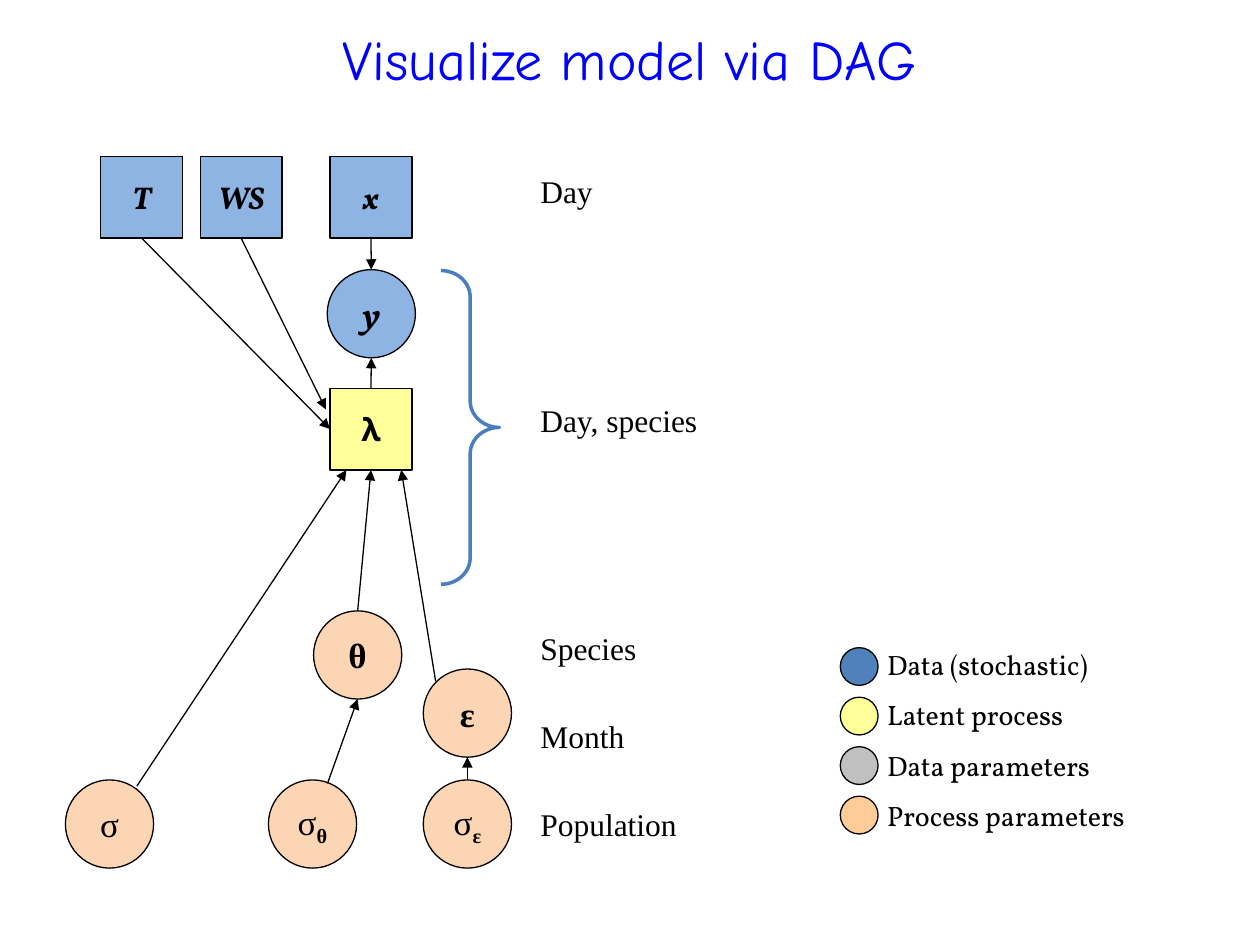
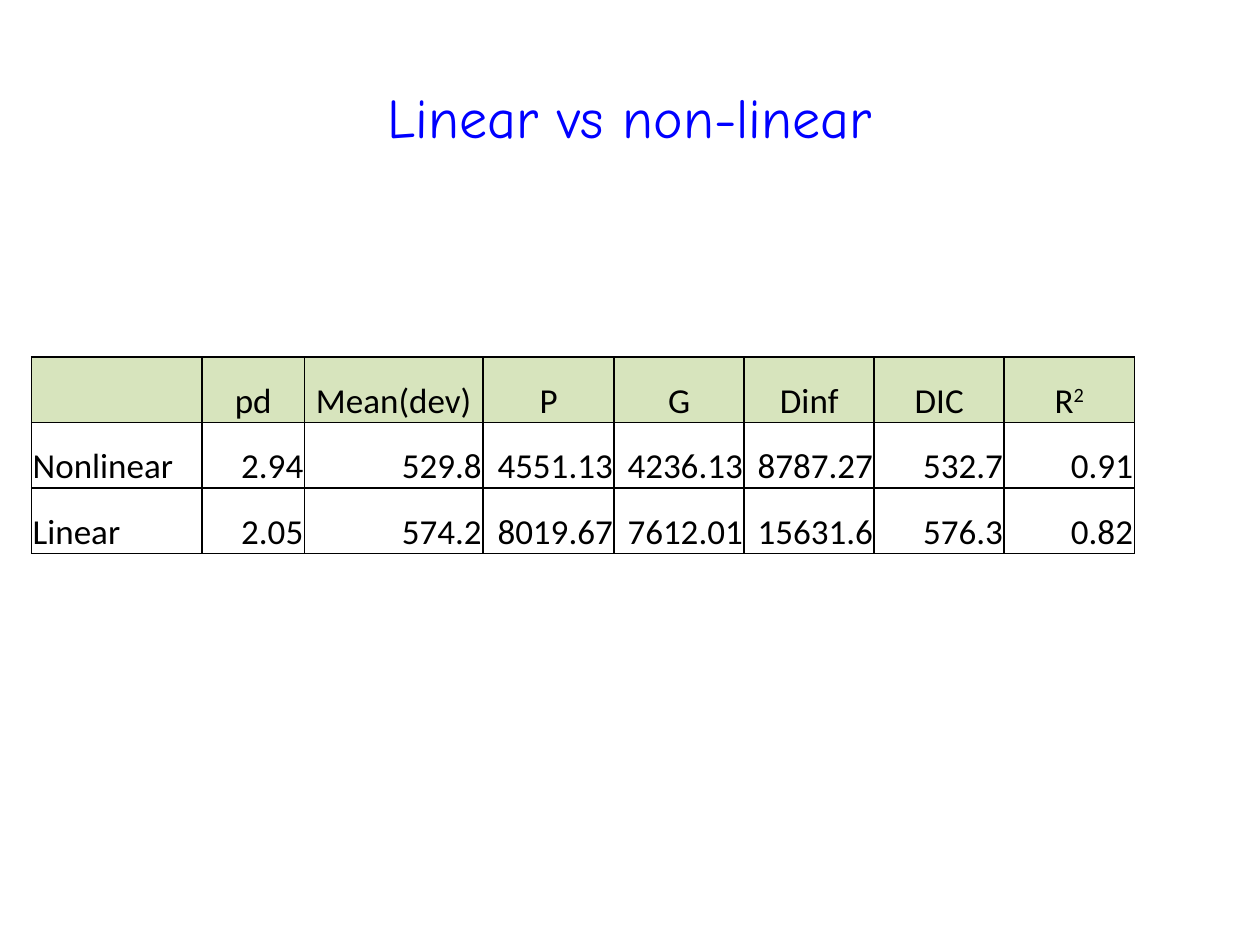
from lxml.etree import SubElement
from pptx import Presentation
from pptx.dml.color import RGBColor
from pptx.enum.shapes import MSO_CONNECTOR, MSO_SHAPE
from pptx.enum.text import MSO_ANCHOR, PP_ALIGN
from pptx.oxml.ns import qn
from pptx.util import Pt

BLACK = RGBColor(0x00, 0x00, 0x00)
TITLE_BLUE = RGBColor(0x00, 0x00, 0xFF)
DATA_BLUE = RGBColor(0x8E, 0xB4, 0xE3)
LEGEND_BLUE = RGBColor(0x4F, 0x81, 0xBD)
LATENT_YELLOW = RGBColor(0xFF, 0xFF, 0x99)
LEGEND_GREY = RGBColor(0xC0, 0xC0, 0xC0)
PARAM_ORANGE = RGBColor(0xFC, 0xD5, 0xB5)
LEGEND_ORANGE = RGBColor(0xFF, 0xCC, 0x99)
BRACE_BLUE = RGBColor(0x4B, 0x7E, 0xBC)
HEADER_GREEN = RGBColor(0xD7, 0xE4, 0xBD)

TITLE_FONT = "Comic Neue"
SERIF = "Times New Roman"
LEGEND_FONT = "Vollkorn"
TABLE_FONT = "Calibri"

SQUARE, CIRCLE = 46.8, 50.4

# name: (shape, left, top, fill, font, bold, italic, subscript)
NODES = {
    "T": (MSO_SHAPE.RECTANGLE, 20.2, 0, DATA_BLUE, "Vollkorn", True, True),
    "WS": (MSO_SHAPE.RECTANGLE, 77, 0, DATA_BLUE, "Vollkorn", True, True),
    "x": (MSO_SHAPE.RECTANGLE, 151.2, 0, DATA_BLUE, "Vollkorn", True, True),
    "y": (MSO_SHAPE.OVAL, 149.6, 64.8, DATA_BLUE, "Vollkorn", True, True),
    "λ": (MSO_SHAPE.RECTANGLE, 151.2, 132.5, LATENT_YELLOW, "Montserrat", True, False),
    "θ": (MSO_SHAPE.OVAL, 141.8, 259.8, PARAM_ORANGE, SERIF, True, False),
    "ε": (MSO_SHAPE.OVAL, 204.5, 293, PARAM_ORANGE, SERIF, True, False),
    "σ": (MSO_SHAPE.OVAL, 0, 356.4, PARAM_ORANGE, SERIF, False, False),
    "σ_θ": (MSO_SHAPE.OVAL, 116, 356.4, PARAM_ORANGE, SERIF, False, False),
    "σ_ε": (MSO_SHAPE.OVAL, 204.5, 356.4, PARAM_ORANGE, SERIF, False, False),
}

# Arrow ends are fractions of the width and height of their node
TOP, BOTTOM = (0.5, 0), (0.5, 1)
ARROWS = [
    ("T", BOTTOM, "λ", (0, 0.5)),
    ("WS", BOTTOM, "λ", (-0.05, 0.26)),
    ("x", BOTTOM, "y", TOP),
    ("λ", TOP, "y", BOTTOM),
    ("σ", (0.81, 0.07), "λ", (0.2, 1)),
    ("θ", TOP, "λ", BOTTOM),
    ("ε", (0.14, 0.14), "λ", (0.87, 1)),
    ("σ_θ", (0.67, 0.04), "θ", BOTTOM),
    ("σ_ε", TOP, "ε", BOTTOM),
]

# (label, space before)
LEVELS = [("Day", 0), ("Day, species", 109), ("Species", 109),
          ("Month", 28.5), ("Population", 28.5)]

LEGEND = [("Data (stochastic)", LEGEND_BLUE), ("Latent process", LATENT_YELLOW),
          ("Data parameters", LEGEND_GREY), ("Process parameters", LEGEND_ORANGE)]

COLUMN_WIDTHS = [97.4, 58.6, 102, 75, 74.3, 74.3, 74.3, 74.3]
ROW_HEIGHT = 37.5
ROWS = [
    ["", "pd", "Mean(dev)", "P", "G", "Dinf", "DIC", "R^2"],
    ["Nonlinear", "2.94", "529.8", "4551.13", "4236.13", "8787.27", "532.7", "0.91"],
    ["Linear", "2.05", "574.2", "8019.67", "7612.01", "15631.6", "576.3", "0.82"],
]


def add_run(p, text, font, size, color=BLACK, bold=False, italic=False, baseline=0):
    """Add one run; baseline is in percent, negative for a subscript."""
    r = p.add_run()
    r.text = text
    r.font.name, r.font.size = font, Pt(size)
    r.font.bold, r.font.italic = bold, italic
    r.font.color.rgb = color
    if baseline:
        r.font._element.set("baseline", str(baseline * 1000))


def add_text_box(s, left, top, width, height, wrap=True):
    tf = s.shapes.add_textbox(Pt(left), Pt(top), Pt(width), Pt(height)).text_frame
    tf.word_wrap = wrap
    return tf


def add_title(s, text, top, height):
    tf = add_text_box(s, 36, top, 648, height)
    tf.vertical_anchor = MSO_ANCHOR.MIDDLE
    p = tf.paragraphs[0]
    p.alignment = PP_ALIGN.CENTER
    add_run(p, text, TITLE_FONT, 32, TITLE_BLUE)


def add_outlined(s, kind, left, top, width, height, fill=None, line=BLACK, weight=0.75):
    sp = s.shapes.add_shape(kind, Pt(left), Pt(top), Pt(width), Pt(height))
    sp.shadow.inherit = False
    if fill is None:
        sp.fill.background()
    else:
        sp.fill.solid()
        sp.fill.fore_color.rgb = fill
    sp.line.color.rgb = line
    sp.line.width = Pt(weight)
    return sp


def add_node(s, left, top, name, kind, fill, font, bold, italic):
    """Draw a node; what follows an underscore in its name is a subscript."""
    round_node = kind == MSO_SHAPE.OVAL
    side = CIRCLE if round_node else SQUARE
    size = 20 if round_node else 18
    sp = add_outlined(s, kind, left, top, side, side, fill)
    tf = sp.text_frame
    tf.word_wrap = False
    tf.vertical_anchor = MSO_ANCHOR.MIDDLE
    p = tf.paragraphs[0]
    p.alignment = PP_ALIGN.CENTER
    symbol, _, subscript = name.partition("_")
    add_run(p, symbol, font, size, bold=bold, italic=italic)
    if subscript:
        add_run(p, subscript, font, size, bold=True, baseline=-25)
    return sp


def add_arrow(s, start, start_at, end, end_at):
    points = [(int(sp.left + fx * sp.width), int(sp.top + fy * sp.height))
              for sp, (fx, fy) in ((start, start_at), (end, end_at))]
    line = s.shapes.add_connector(MSO_CONNECTOR.STRAIGHT, *points[0], *points[1])
    line.line.color.rgb = BLACK
    line.line.width = Pt(0.75)
    ln = line.line._get_or_add_ln()
    SubElement(ln, qn("a:tailEnd"), type="triangle")
    SubElement(line._element.spPr, qn("a:effectLst"))


def add_graph(s, left, top):
    nodes = {}
    for name, (kind, x, y, *style) in NODES.items():
        nodes[name] = add_node(s, left + x, top + y, name, kind, *style)
    for start, start_at, end, end_at in ARROWS:
        add_arrow(s, nodes[start], start_at, nodes[end], end_at)


def add_levels(s, left, top):
    """Name the level of each tier, with a brace around the middle ones."""
    brace = add_outlined(s, MSO_SHAPE.RIGHT_BRACE, left, top + 59.6, 33.4, 179.3,
                         line=BRACE_BLUE, weight=2)
    brace.adjustments[0], brace.adjustments[1] = 0.452, 0.5
    tf = add_text_box(s, left + 49.7, top, 144, 390)
    for i, (label, gap) in enumerate(LEVELS):
        p = tf.add_paragraph() if i else tf.paragraphs[0]
        p.space_before = Pt(gap)
        add_run(p, label, SERIF, 18)


def add_legend(s, left, top):
    for i, (label, color) in enumerate(LEGEND):
        add_outlined(s, MSO_SHAPE.OVAL, left, top + 3.6 + 28.3 * i, 21.6, 21.6, color)
        tf = add_text_box(s, left + 19.6, top + 28.8 * i, 151, 26.6, wrap=False)
        add_run(tf.paragraphs[0], label, LEGEND_FONT, 16)


def add_borders(cell):
    tcPr = cell._tc.get_or_add_tcPr()
    for side in ("a:lnL", "a:lnR", "a:lnT", "a:lnB"):
        ln = SubElement(tcPr, qn(side), w=str(Pt(1)))
        fill = SubElement(ln, qn("a:solidFill"))
        SubElement(fill, qn("a:srgbClr"), val=str(BLACK))


def fill_cell(cell, text, header, alignment, spacing):
    """Write and style a cell; what follows a caret is a superscript."""
    add_borders(cell)
    if header:
        cell.fill.solid()
        cell.fill.fore_color.rgb = HEADER_GREEN
    else:
        cell.fill.background()
    cell.vertical_anchor = MSO_ANCHOR.BOTTOM
    cell.margin_left = cell.margin_right = cell.margin_top = Pt(0.7)
    cell.margin_bottom = 0
    p = cell.text_frame.paragraphs[0]
    p.alignment = alignment
    p.line_spacing = spacing
    base, _, power = text.partition("^")
    if base:
        add_run(p, base, TABLE_FONT, 20)
    if power:
        add_run(p, power, TABLE_FONT, 20, baseline=30)


def add_comparison(s, left, top):
    frame = s.shapes.add_table(len(ROWS), len(COLUMN_WIDTHS), Pt(left), Pt(top),
                               Pt(sum(COLUMN_WIDTHS)), Pt(ROW_HEIGHT * len(ROWS)))
    table = frame.table
    table.first_row = table.horz_banding = False
    for column, width in zip(table.columns, COLUMN_WIDTHS):
        column.width = Pt(width)
    for i, row in enumerate(ROWS):
        table.rows[i].height = Pt(ROW_HEIGHT)
        for j, text in enumerate(row):
            if i == 0:
                alignment, spacing = PP_ALIGN.CENTER, 1.5
            elif j == 0:
                alignment, spacing = PP_ALIGN.LEFT, 1.5
            else:
                alignment, spacing = PP_ALIGN.RIGHT, 1.0
            fill_cell(table.cell(i, j), text, i == 0, alignment, spacing)


def build_graph_slide(s):
    add_title(s, "Visualize model via DAG", 0.7, 64.8)
    add_graph(s, 37.4, 89.3)
    add_levels(s, 252, 95)
    add_legend(s, 480.2, 366.5)


def build_comparison_slide(s):
    add_title(s, "Linear vs non-linear", 21.6, 90)
    add_comparison(s, 18, 204)


def main():
    prs = Presentation()
    prs.slide_width, prs.slide_height = Pt(720), Pt(540)
    for build in (build_graph_slide, build_comparison_slide):
        build(prs.slides.add_slide(prs.slide_layouts[6]))
    prs.save("out.pptx")


if __name__ == "__main__":
    main()
